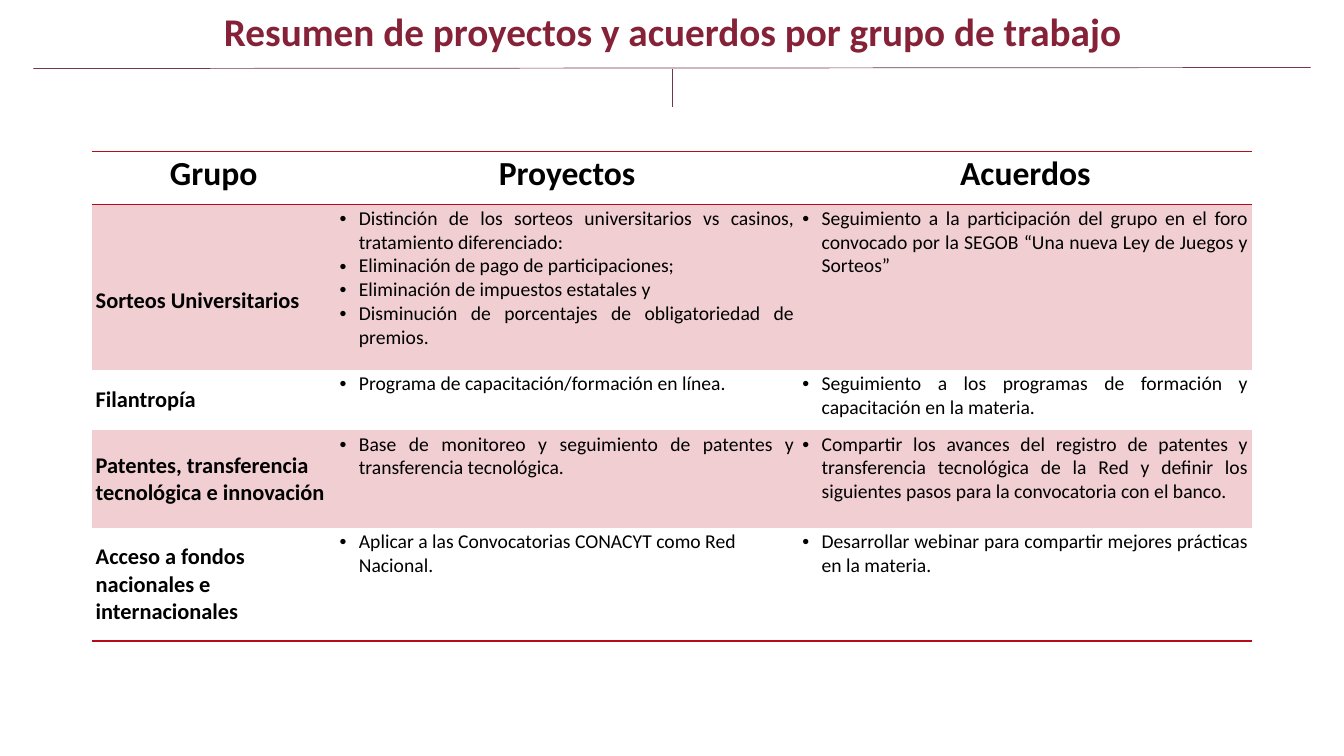
from lxml import etree
from pptx import Presentation, util as u
from pptx.dml.color import RGBColor
from pptx.enum import shapes, text
from pptx.oxml import ns

PX = 9144
LEFT, MID, JUST = text.PP_ALIGN.LEFT, text.PP_ALIGN.CENTER, text.PP_ALIGN.JUSTIFY
RED, PINK, WINE, PLUM, BLACK = "B50B1B", "F0CED1", "852238", "713648", "000000"


def px(n):
    """Turn pixels into EMU."""
    return u.Emu(n * PX)


def color(code):
    """Turn a hex string into a colour."""
    return RGBColor.from_string(code)


def sub(node, tag, **attrs):
    """Append a DrawingML element."""
    return etree.SubElement(node, ns.qn("a:" + tag), attrs)


class Page:
    """Hold the style and the current slide."""

    def __init__(self, deck, font):
        """Add a title-only slide."""
        self.slide = deck.slides.add_slide(deck.slide_layouts[5])
        self.font = font

    def style(self, para, size, code, bold, align):
        """Format a paragraph and its runs."""
        para.alignment = align
        for run in para.runs:
            font = run.font
            font.name, font.size, font.bold = self.font, u.Pt(size), bold
            font.color.rgb = color(code)

    def title(self, words, x, y, w, h):
        """Place the title."""
        box = self.slide.shapes.title
        box.left, box.top, box.width, box.height = map(px, (x, y, w, h))
        frame = box.text_frame
        frame.text = words
        frame.auto_size = text.MSO_AUTO_SIZE.NONE
        frame.vertical_anchor = text.MSO_ANCHOR.MIDDLE
        para = frame.paragraphs[0]
        para.line_spacing = 0.9
        self.style(para, 28, WINE, True, MID)

    def line(self, *ends):
        """Draw a thin rule."""
        rule = self.slide.shapes.add_connector(
            shapes.MSO_CONNECTOR.STRAIGHT, *map(px, ends))
        rule.line.color.rgb = color(PLUM)
        rule.line.width = u.Pt(0.5)
        sub(rule._element.spPr, "effectLst")

    def edges(self, cell, lines):
        """Rule the named sides of a cell and clear the rest."""
        props = cell._tc.get_or_add_tcPr()
        for side in "LRTB":
            edge = sub(props, "ln" + side, w=str(u.Pt(1)))
            if side in lines:
                sub(sub(edge, "solidFill"), "srgbClr", val=RED)
            else:
                sub(edge, "noFill")

    def cell(self, cell, words, size, bold, aligns, bullet):
        """Write the paragraphs of a cell."""
        cell.margin_left = cell.margin_right = px(4)
        cell.margin_top = cell.margin_bottom = px(2)
        cell.text = "\n".join(words)
        for para in cell.text_frame.paragraphs:
            if bullet:
                props = para._p.get_or_add_pPr()
                props.set("marL", str(px(19)))
                props.set("indent", str(px(-19)))
                sub(props, "buFont", typeface="Arial")
                sub(props, "buChar", char="•")
            self.style(para, size, BLACK, bold, aligns)

    def table(self, head, rows, x, y, wide, high):
        """Draw the table with banded rows."""
        grid = self.slide.shapes.add_table(
            len(high), len(wide), px(x), px(y), px(sum(wide)), px(sum(high))).table
        grid.first_row = grid.horz_banding = False
        for col, w in zip(grid.columns, wide):
            col.width = px(w)
        for row, h in zip(grid.rows, high):
            row.height = px(h)
        last = len(rows)
        for r, row in enumerate([head] + rows):
            for c, item in enumerate(row):
                cell = grid.cell(r, c)
                self.edges(cell, {0: "TB", 1: "T", last: "B"}.get(r, ""))
                if r % 2:
                    cell.fill.solid()
                    cell.fill.fore_color.rgb = color(PINK)
                else:
                    cell.fill.background()
                if r == 0:
                    self.cell(cell, [item], 24, True, MID, False)
                elif c == 0:
                    self.cell(cell, [item], 16, True, LEFT, False)
                    cell.vertical_anchor = text.MSO_ANCHOR.MIDDLE
                else:
                    align = LEFT if c == 1 and r % 2 == 0 else JUST
                    self.cell(cell, item, 14, False, align, True)
        return grid


HEAD = ["Grupo", "Proyectos", "Acuerdos"]
ROWS = [
    ["Sorteos Universitarios",
     ["Distinción de los sorteos universitarios vs casinos, tratamiento diferenciado:",
      "Eliminación de pago de participaciones;",
      "Eliminación de impuestos estatales y",
      "Disminución de porcentajes de obligatoriedad de premios."],
     ["Seguimiento a la participación del grupo en el foro convocado por la SEGOB "
      "“Una nueva Ley de Juegos y Sorteos”"]],
    ["Filantropía",
     ["Programa de capacitación/formación en línea."],
     ["Seguimiento a los programas de formación y capacitación en la materia."]],
    ["Patentes, transferencia tecnológica e innovación",
     ["Base de monitoreo y seguimiento de patentes y transferencia tecnológica."],
     ["Compartir los avances del registro de patentes y transferencia tecnológica "
      "de la Red y definir los siguientes pasos para la convocatoria con el banco."]],
    ["Acceso a fondos nacionales e internacionales",
     ["Aplicar a las Convocatorias CONACYT como Red Nacional."],
     ["Desarrollar webinar para compartir mejores prácticas en la materia."]],
]


def main():
    """Build the slide and save it."""
    deck = Presentation()
    deck.slide_width, deck.slide_height = px(1333), px(750)
    page = Page(deck, "Calibri")
    grid = page.table(HEAD, ROWS, 91, 150, [242, 459, 450], [53, 164, 60, 97, 112])
    grid.cell(1, 0).margin_top = px(29)
    page.title("Resumen de proyectos y acuerdos por grupo de trabajo", 61, 8, 1212, 52)
    page.line(33, 68, 1300, 67)
    page.line(667, 68, 667, 106)
    deck.save("out.pptx")


if __name__ == "__main__":
    main()
